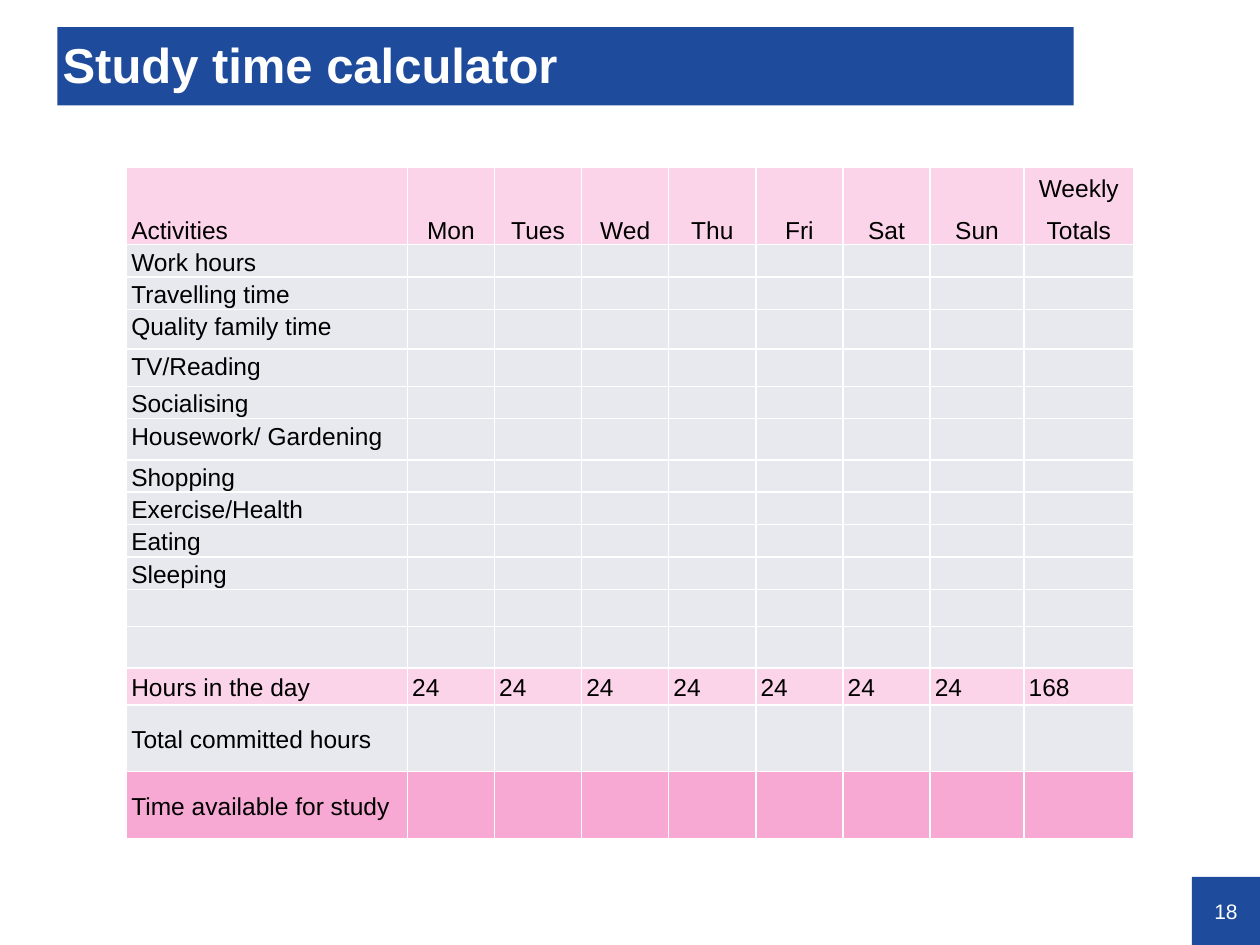
import pptx
import pptx.dml.color
import pptx.enum.shapes
import pptx.enum.text
import pptx.oxml
import pptx.oxml.ns
import pptx.util

Pt = pptx.util.Pt
RGBColor = pptx.dml.color.RGBColor
ALIGN = pptx.enum.text.PP_ALIGN
ANCHOR = pptx.enum.text.MSO_ANCHOR

BLUE = RGBColor(0x1E, 0x4B, 0x9B)
WHITE = RGBColor(0xFF, 0xFF, 0xFF)
BLACK = RGBColor(0, 0, 0)
GREY = RGBColor(0xE8, 0xE9, 0xEF)
LIGHT_PINK = RGBColor(0xFB, 0xD4, 0xE9)
PINK = RGBColor(0xF8, 0xA9, 0xD3)

DAYS = ["Mon", "Tues", "Wed", "Thu", "Fri", "Sat", "Sun"]
COLUMN_WIDTHS = [160.5] + [49.8] * 6 + [53.7, 62.6]

# Activity and row height
ACTIVITIES = [
    ("Work hours", 18.5),
    ("Travelling time", 18.5),
    ("Quality family time", 22.8),
    ("TV/Reading", 21.2),
    ("Socialising", 18.5),
    ("Housework/ Gardening", 23.6),
    ("Shopping", 18.5),
    ("Exercise/Health", 18.5),
    ("Eating", 18.5),
    ("Sleeping", 18.5),
    ("", 21.2),
    ("", 23.7),
]


def write(frame, text, size=14, color=BLACK, bold=False, align=ALIGN.LEFT,
          line_spacing=None, space_after=None):
    """Fill a text frame, one paragraph for each line of the text."""
    for index, line in enumerate(text.split("\n")):
        paragraph = frame.add_paragraph() if index else frame.paragraphs[0]
        paragraph.alignment = align
        paragraph.line_spacing = line_spacing
        paragraph.space_after = space_after
        if not line:
            # An empty cell keeps its row low through the end-mark size
            paragraph._p.get_or_add_endParaRPr().set("sz", str(size * 100))
            continue
        run = paragraph.add_run()
        run.text = line
        run.font.name = "Arial"
        run.font.size = Pt(size)
        run.font.bold = bold
        run.font.color.rgb = color


def set_insets(frame, left=0, top=0):
    frame.margin_left, frame.margin_top = Pt(left), Pt(top)
    frame.margin_right = frame.margin_bottom = 0
    frame.vertical_anchor = ANCHOR.MIDDLE
    frame.word_wrap = True


def paint(shape, color):
    shape.fill.solid()
    shape.fill.fore_color.rgb = color
    shape.line.fill.background()


def add_title(slide, text):
    title = slide.shapes.title
    title.left, title.top = Pt(32.8), Pt(15.5)
    title.width, title.height = Pt(580.8), Pt(44.8)
    paint(title, BLUE)
    set_insets(title.text_frame, left=3, top=1.5)
    title.text_frame.auto_size = pptx.enum.text.MSO_AUTO_SIZE.NONE
    write(title.text_frame, text, size=28, color=WHITE, bold=True,
          line_spacing=0.9)


def add_page_number(slide, number):
    badge = slide.shapes.add_shape(
        pptx.enum.shapes.MSO_SHAPE.RECTANGLE,
        Pt(681.1), Pt(501.1), Pt(38.9), Pt(38.9))
    badge.shadow.inherit = False
    paint(badge, BLUE)
    set_insets(badge.text_frame)
    write(badge.text_frame, number, size=12, color=WHITE, align=ALIGN.CENTER)


def add_borders(cell, color, width):
    properties = cell._tc.get_or_add_tcPr()
    for position, side in enumerate(["lnL", "lnR", "lnT", "lnB"]):
        properties.insert(position, pptx.oxml.parse_xml(
            f'<a:{side} {pptx.oxml.ns.nsdecls("a")} w="{Pt(width)}">'
            f'<a:solidFill><a:srgbClr val="{color}"/></a:solidFill></a:{side}>'))


def format_cell(cell, text, fill, anchor, align):
    cell.margin_left = cell.margin_right = Pt(2.7)
    cell.margin_top = cell.margin_bottom = 0
    cell.vertical_anchor = anchor
    cell.fill.solid()
    cell.fill.fore_color.rgb = fill
    add_borders(cell, WHITE, 1)
    write(cell.text_frame, text, align=align, line_spacing=1.15,
          space_after=Pt(6))


def add_calculator(slide):
    blank = [""] * (len(DAYS) + 1)
    hours = ["24"] * len(DAYS) + ["168"]
    # Texts, height, fill, anchor, alignment of the first and the other columns
    rows = [(["Activities", *DAYS, "Weekly\nTotals"], 44, LIGHT_PINK,
             ANCHOR.BOTTOM, ALIGN.LEFT, ALIGN.CENTER)]
    rows += [([activity, *blank], height, GREY,
              ANCHOR.TOP, ALIGN.LEFT, ALIGN.LEFT)
             for activity, height in ACTIVITIES]
    rows += [
        (["Hours in the day", *hours], 21.2, LIGHT_PINK,
         ANCHOR.MIDDLE, ALIGN.LEFT, ALIGN.LEFT),
        (["Total committed hours", *blank], 38.2, GREY,
         ANCHOR.MIDDLE, ALIGN.JUSTIFY, ALIGN.LEFT),
        (["Time available for study", *blank], 38.2, PINK,
         ANCHOR.MIDDLE, ALIGN.LEFT, ALIGN.LEFT),
    ]
    calculator = slide.shapes.add_table(
        len(rows), len(COLUMN_WIDTHS), Pt(72.3), Pt(95.8),
        Pt(sum(COLUMN_WIDTHS)), Pt(sum(row[1] for row in rows))).table
    calculator.horz_banding = False
    for column, width in zip(calculator.columns, COLUMN_WIDTHS):
        column.width = Pt(width)
    for row, (texts, height, fill, anchor, first, others) in zip(
            calculator.rows, rows):
        row.height = Pt(height)
        for index, (cell, text) in enumerate(zip(row.cells, texts)):
            format_cell(cell, text, fill, anchor, others if index else first)
    calculator.first_row = False


def main():
    presentation = pptx.Presentation()
    presentation.slide_width, presentation.slide_height = Pt(720), Pt(540)
    title_only = presentation.slide_layouts[5]
    slide = presentation.slides.add_slide(title_only)

    add_page_number(slide, "18")
    add_title(slide, "Study time calculator")
    add_calculator(slide)

    presentation.save("out.pptx")


if __name__ == "__main__":
    main()
